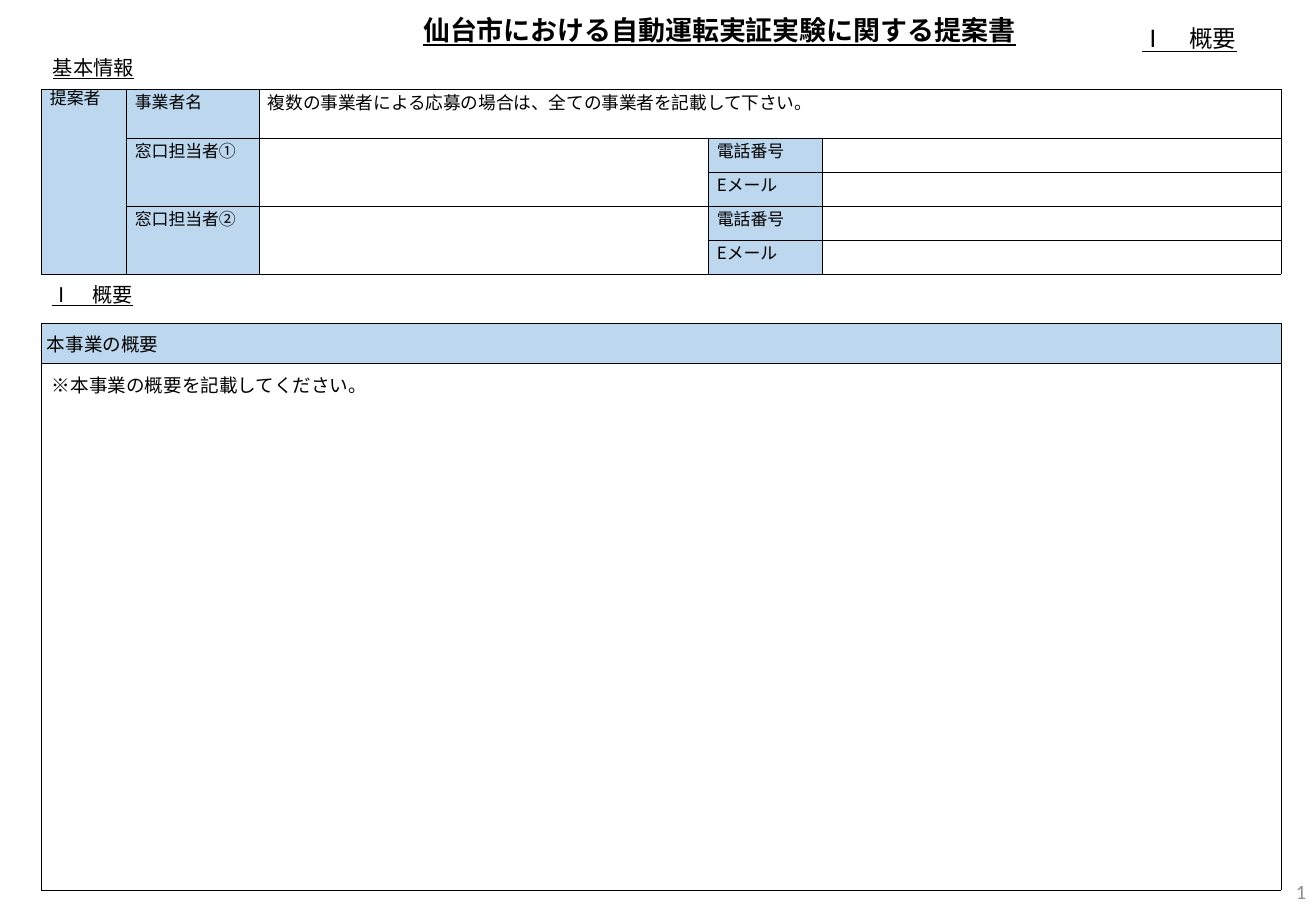
from dataclasses import dataclass

from lxml.etree import SubElement
from pptx import Presentation
from pptx.dml.color import RGBColor as RGB
from pptx.enum.text import MSO_ANCHOR as ANC, PP_ALIGN as AL
from pptx.oxml.ns import qn
from pptx.util import Pt

PX = 914400 / 121.5


@dataclass(frozen=True)
class Theme:
    font: str = "Noto Sans CJK JP"
    latin: str = "Calibri"
    ink: RGB = RGB(0, 0, 0)
    gray: RGB = RGB(0x8C, 0x8C, 0x8C)
    head: RGB = RGB(0xBD, 0xD7, 0xEE)
    title: float = 16
    mark: float = 14
    label: float = 12
    body: float = 11
    note: float = 10.5
    cell: float = 10
    line: float = 0.25


T = Theme()

# text, box (left, top, width, height), size, underlined
TITLE = ("仙台市における自動運転実証実験に関する提案書", (303, 8, 833, 45), T.title, True)
LABELS = [
    ("基本情報", (41, 49, 120, 36), T.label, True),
    ("Ⅰ　概要", (40, 276, 135, 36), T.label, True),
    ("Ⅰ　概要", (1130, 18, 148, 41), T.mark, True),
    ("※本事業の概要を記載してください。", (40, 368, 1188, 35), T.body, False),
]
NUMBER = ("1", (1011, 867, 307, 49), T.label, False)

LEFT = 41
INFO = [
    ["提案者", "事業者名", "複数の事業者による応募の場合は、全ての事業者を記載して下さい。", "", ""],
    ["", "窓口担当者①", "", "電話番号", ""],
    ["", "", "", "Eメール", ""],
    ["", "窓口担当者②", "", "電話番号", ""],
    ["", "", "", "Eメール", ""],
]
INFO_COLS = [85, 133, 449, 114, 459]
INFO_ROWS = [49] + [34] * 4
# first and last cell of each merged block, as (row, column)
SPANS = [((0, 0), (4, 0)), ((0, 2), (0, 4))] + [
    ((r, c), (r + 1, c)) for r in (1, 3) for c in (1, 2)
]
PLAN = [["本事業の概要"], [""]]
PLAN_ROWS = [40, 527]


def px(n):
    return round(n * PX)


def style(run, size, color=T.ink, font=T.font):
    run.font.size = Pt(size)
    run.font.name = font
    run.font.color.rgb = color
    SubElement(run._r.get_or_add_rPr(), qn("a:ea")).set("typeface", font)


def add_text(slide, item, align=AL.LEFT, anchor=ANC.MIDDLE, **look):
    text, box, size, under = item
    frame = slide.shapes.add_textbox(*map(px, box)).text_frame
    frame.word_wrap = True
    frame.vertical_anchor = anchor
    frame.text = text
    para = frame.paragraphs[0]
    para.alignment = align
    run = para.runs[0]
    style(run, size, **look)
    if under:
        run.font.underline = True
    return run


def edge(cell):
    """Draw a thin line on all four sides of a cell."""
    props = cell._tc.get_or_add_tcPr()
    for i, side in enumerate("LRTB"):
        ln = SubElement(props, qn(f"a:ln{side}"), w=str(Pt(T.line)))
        fill = SubElement(ln, qn("a:solidFill"))
        SubElement(fill, qn("a:srgbClr"), val=str(T.ink))
        props.insert(i, ln)


def add_grid(slide, top, cols, rows, data, tinted, size, pad, align):
    """Add a table; tinted(row, column) tells which cells are headings."""
    box = map(px, (LEFT, top, sum(cols), sum(rows)))
    grid = slide.shapes.add_table(len(rows), len(cols), *box).table
    grid.first_row = grid.horz_banding = False
    for col, wide in zip(grid.columns, cols):
        col.width = px(wide)
    for r, (row, high) in enumerate(zip(data, rows)):
        grid.rows[r].height = px(high)
        for c, text in enumerate(row):
            cell = grid.cell(r, c)
            cell.margin_left = cell.margin_right = px(pad)
            cell.margin_top = cell.margin_bottom = 0
            if tinted(r, c):
                cell.fill.solid()
                cell.fill.fore_color.rgb = T.head
            else:
                cell.fill.background()
            edge(cell)
            para = cell.text_frame.paragraphs[0]
            para.alignment = align
            if text:
                para.text = text
                style(para.runs[0], size)
            else:
                SubElement(para._p, qn("a:endParaRPr"), sz=str(size * 100))
    return grid


def main():
    prs = Presentation()
    prs.slide_width, prs.slide_height = px(1316), px(911)
    slide = prs.slides.add_slide(prs.slide_layouts[6])

    add_text(slide, TITLE, AL.CENTER, ANC.TOP).font.bold = True

    info = add_grid(slide, 89, INFO_COLS, INFO_ROWS, INFO,
                    lambda r, c: c < 2 or (c == 3 and r > 0),
                    T.cell, 9, AL.JUSTIFY)
    for first, last in SPANS:
        info.cell(*first).merge(info.cell(*last))
    info.cell(0, 0).text_frame.paragraphs[0].line_spacing = Pt(12)
    info.cell(0, 2).text_frame.paragraphs[0].runs[0].font.size = Pt(T.note)

    plan = add_grid(slide, 323, [sum(INFO_COLS)], PLAN_ROWS, PLAN,
                    lambda r, c: r == 0, T.body, 6, AL.LEFT)
    plan.cell(0, 0).vertical_anchor = ANC.MIDDLE

    page = add_text(slide, NUMBER, AL.RIGHT, color=T.gray, font=T.latin)._r
    page.tag = qn("a:fld")
    page.set("id", "{B6F15528-21DE-4FAA-801E-634DDDAF4B2B}")
    page.set("type", "slidenum")

    for item in LABELS:
        add_text(slide, item)
    prs.save("out.pptx")


if __name__ == "__main__":
    main()
